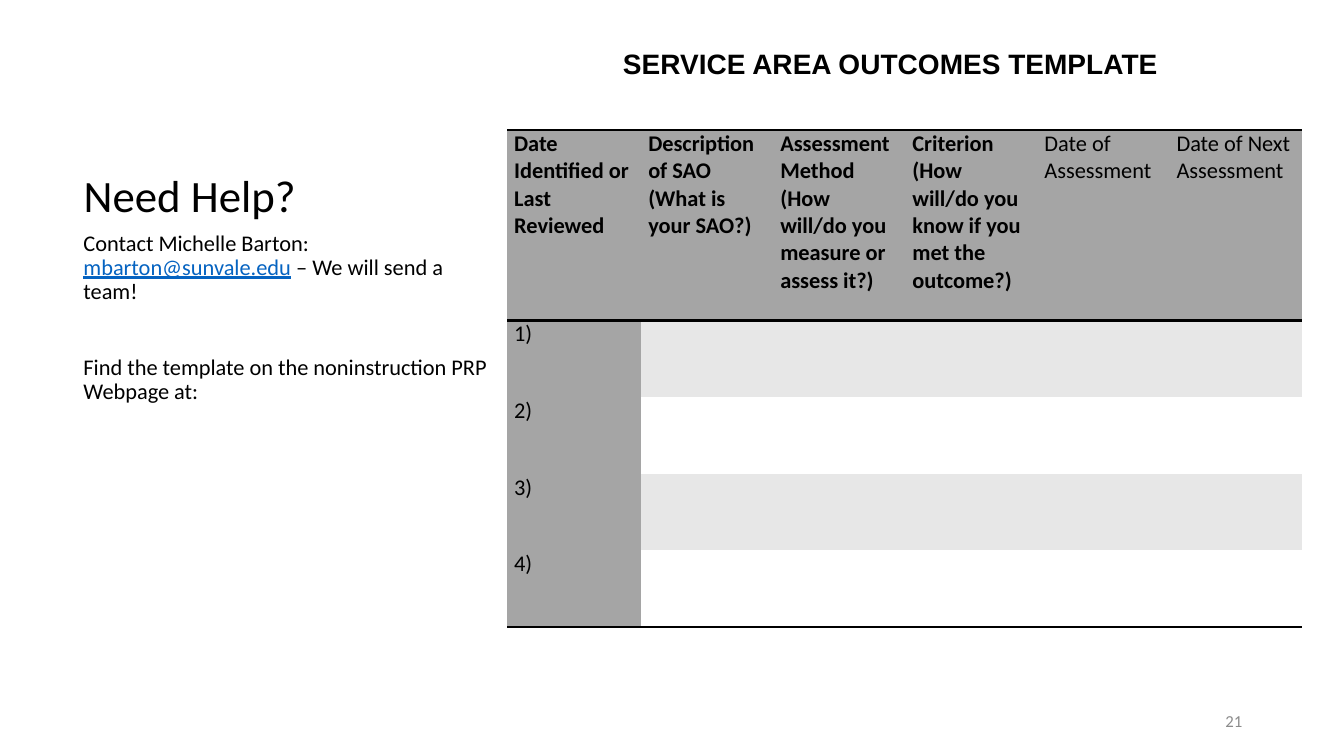
import pptx
import pptx.dml.color
import pptx.enum.text
import pptx.oxml
import pptx.oxml.ns
import pptx.util

Inches = pptx.util.Inches
Pt = pptx.util.Pt
Align = pptx.enum.text.PP_ALIGN
Anchor = pptx.enum.text.MSO_ANCHOR

THEME = {
    "black": "000000", "link": "0563C1", "number": "8C8C8C",
    "header": "A5A5A5", "band": "E7E7E7", "plain": "FFFFFF",
    "body font": "Calibri", "heading font": "Arial",
    "title size": 32, "heading size": 20, "text size": 16, "number size": 12,
}


def add_span(para, text, size="text size", color="black", font="body font", **styles):
    span = para.add_run()
    span.text = text
    span.font.color.rgb = pptx.dml.color.RGBColor.from_string(THEME[color])
    formats = {"size": Pt(THEME[size]), "name": THEME[font], **styles}
    for name, value in formats.items():
        setattr(span.font, name, value)


def add_frame(shapes, left, top, width, height, **formats):
    frame = shapes.add_textbox(Inches(left), Inches(top), Inches(width), Inches(height)).text_frame
    for name, value in {"word_wrap": True, **formats}.items():
        setattr(frame, name, value)
    return frame


deck = pptx.Presentation()
deck.slide_width, deck.slide_height = Inches(13.33), Inches(7.5)
page = deck.slides.add_slide(deck.slide_layouts[5])

# Title
title = page.shapes.title
title_place = {"left": 0.73, "top": 0.5, "width": 4.3, "height": 1.75}
for name, value in title_place.items():
    setattr(title, name, Inches(value))
title_format = {"vertical_anchor": Anchor.BOTTOM, "word_wrap": True,
                "auto_size": pptx.enum.text.MSO_AUTO_SIZE.NONE}
for name, value in title_format.items():
    setattr(title.text_frame, name, value)
para = title.text_frame.paragraphs[0]
para.alignment, para.line_spacing = Align.LEFT, 0.9
add_span(para, "Need Help?", "title size")

# Contact text
frame = add_frame(page.shapes, 0.73, 2.25, 4.3, 4.17)
contact = frame.paragraphs[0]
add_span(contact, "Contact Michelle Barton: ")
add_span(contact, "mbarton@sunvale.edu", color="link", underline=True)
add_span(contact, " – We will send a team!")
template = frame.add_paragraph()
template.space_before = Pt(37)
add_span(template, "Find the template on the noninstruction PRP Webpage at:")
for para in frame.paragraphs:
    para.line_spacing = 0.9

# Slide number
frame = add_frame(page.shapes, 9.42, 6.95, 3, 0.4, vertical_anchor=Anchor.MIDDLE)
frame.paragraphs[0].alignment = Align.RIGHT
add_span(frame.paragraphs[0], "21", "number size", "number")

# Table heading
frame = add_frame(page.shapes, 6.08, 0.41, 5.63, 0.74, word_wrap=False)
add_span(frame.paragraphs[0], "SERVICE AREA OUTCOMES TEMPLATE", "heading size",
         font="heading font", bold=True)

# Outcomes table
HEADERS = [
    ["Date Identified or Last Reviewed"],
    ["Description of SAO", "(What is your SAO?)"],
    ["Assessment Method", "(How will/do you measure or assess it?)"],
    ["Criterion", "(How will/do you know if you met the outcome?)"],
    ["Date of Assessment"],
    ["Date of Next Assessment"],
]
BOLD_HEADERS = 4
ROWS = 5
table = page.shapes.add_table(ROWS, len(HEADERS), Inches(5.03), Inches(1.29),
                              Inches(7.9), Inches(4.93)).table
table.first_row = table.horz_banding = False
style = table._tbl.tblPr.find(pptx.oxml.ns.qn("a:tableStyleId"))
style.text = "{2D5ABB26-0587-4C30-8999-92F81FD0307C}"
for index, column in enumerate(table.columns):
    column.width = Inches(1.31 if index else 1.33)
for index, row in enumerate(table.rows):
    row.height = Inches(0.76 if index else 1.89)

CELL_FORMAT = {"margin_left": Inches(0.07), "margin_right": Inches(0.07),
               "margin_top": 0, "margin_bottom": 0}
EDGES = {0: ["lnT", "lnB"], ROWS - 1: ["lnB"]}
for r in range(ROWS):
    for c, header in enumerate(HEADERS):
        cell = table.cell(r, c)
        for name, value in CELL_FORMAT.items():
            setattr(cell, name, value)

        # Fill: grey header row and first column, banded body
        shade = "header" if r == 0 or c == 0 else "band" if r % 2 else "plain"
        cell.fill.solid()
        cell.fill.fore_color.rgb = pptx.dml.color.RGBColor.from_string(THEME[shade])

        # Text: header lines or row number
        lines = header if r == 0 else [f"{r})"] if c == 0 else []
        for index, line in enumerate(lines):
            para = cell.text_frame.add_paragraph() if index else cell.text_frame.paragraphs[0]
            add_span(para, line, bold=r == 0 and c < BOLD_HEADERS)

        # Rules above and below the header and under the last row
        for position, edge in enumerate(EDGES.get(r, [])):
            rule = pptx.oxml.parse_xml(
                f'<a:{edge} {pptx.oxml.ns.nsdecls("a")} w="{Pt(2)}"><a:solidFill>'
                f'<a:srgbClr val="{THEME["black"]}"/></a:solidFill></a:{edge}>')
            cell._tc.tcPr.insert(position, rule)

deck.save("out.pptx")
